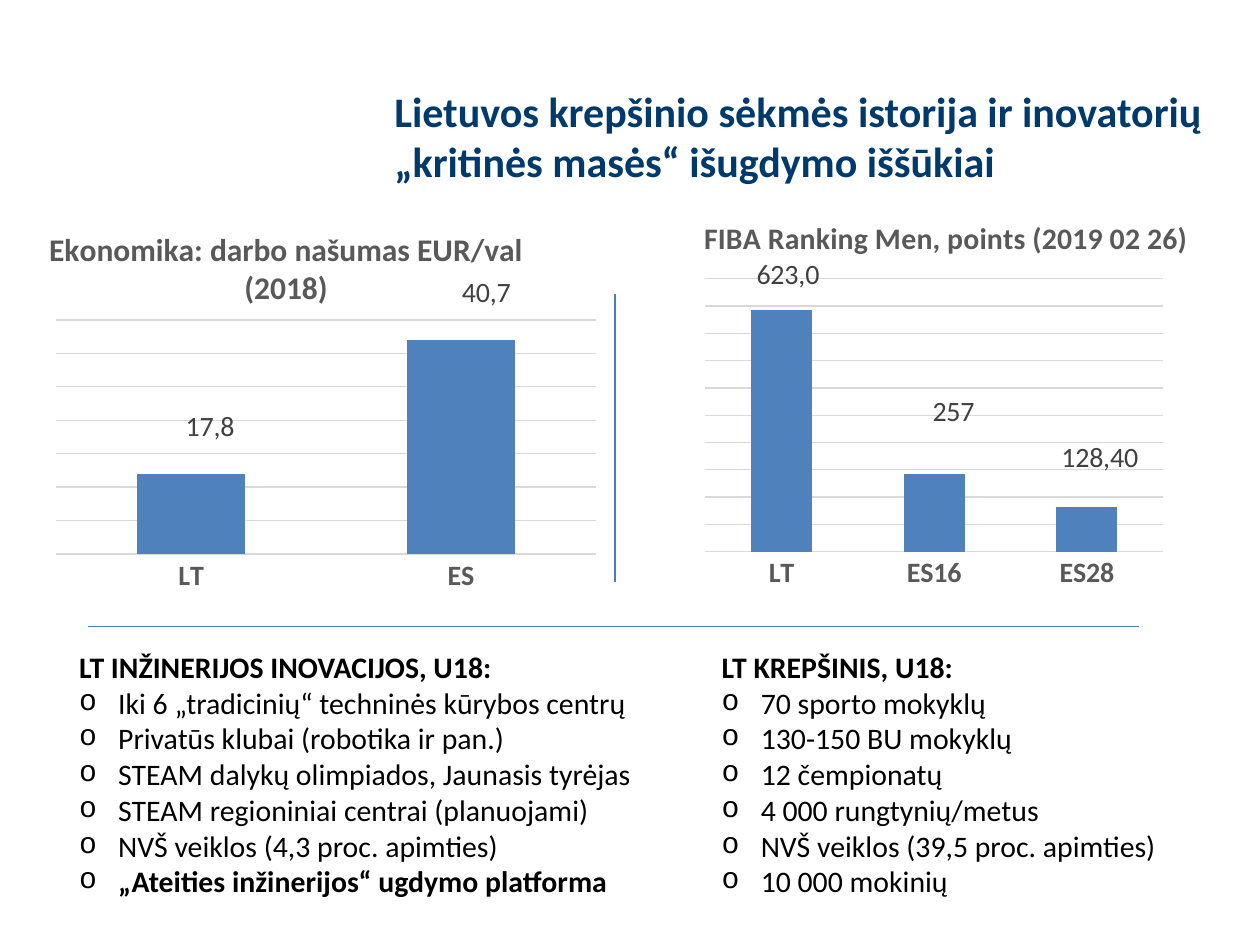
from lxml.etree import SubElement
from pptx import Presentation
from pptx.chart.data import CategoryChartData as ChartData
from pptx.dml.color import RGBColor
from pptx.enum.chart import XL_CHART_TYPE as ChartType
from pptx.enum.chart import XL_LABEL_POSITION as LabelPosition
from pptx.enum.chart import XL_TICK_LABEL_POSITION as TickLabels
from pptx.enum.chart import XL_TICK_MARK as TickMark
from pptx.enum.shapes import MSO_CONNECTOR as Connector
from pptx.enum.text import MSO_ANCHOR as Anchor
from pptx.enum.text import PP_ALIGN as Align
from pptx.oxml.ns import qn
from pptx.util import Inches, Pt

color = RGBColor.from_string
FONT = "Calibri"
BLUE, GREY, DARK = "4F81BD", "595959", "404040"
C15 = "http://schemas.microsoft.com/office/drawing/2012/chart"


def write(para, text, size=17, ink="000000", bold=False):
    span = para.add_run()
    span.text = text
    span.font.name, span.font.size, span.font.bold = FONT, Pt(size), bold
    span.font.color.rgb = color(ink)


def set_layout(parent, index, **values):
    """Place a chart part by shares of the chart's size."""
    for old in parent.findall(qn("c:layout")):
        parent.remove(old)
    layout = SubElement(parent, qn("c:layout"))
    manual = SubElement(layout, qn("c:manualLayout"))
    for tag, value in values.items():
        SubElement(manual, qn("c:" + tag)).set("val", str(value))
    parent.insert(index, layout)


deck = Presentation()
deck.slide_width, deck.slide_height = Inches(10), Inches(7.5)
page = deck.slides.add_slide(deck.slide_layouts[5])
shapes = page.shapes

# Title
title = shapes.title
title.left, title.top, title.width, title.height = map(Inches, (3.03, 0.57, 6.61, 1.01))
title.text_frame.vertical_anchor = Anchor.MIDDLE
title.text_frame.word_wrap = True
title.text_frame.margin_right = 0
heading = title.text_frame.paragraphs[0]
heading.alignment = Align.LEFT
write(heading, "Lietuvos krepšinio sėkmės istorija ir inovatorių „kritinės masės“ išugdymo iššūkiai",
      size=24, ink="003A6C", bold=True)

# Charts: place, title, title size and corner, plot area, axis top and step,
# then per column: category, value, label, label shift
charts = [
    ((-0.26, 1.66, 5.04, 3.26), "Ekonomika: darbo našumas EUR/val (2018)", 18, (0.12, 0.03),
     (0.14, 0.27, 0.85, 0.57), 35, 5,
     [("LT", 12, "17,8", (0.03, -0.06)), ("ES", 32, "40,7", (0.04, -0.06))]),
    ((4.88, 1.61, 5.12, 3.55), "FIBA Ranking Men, points (2019 02 26)", 17, (0.13, 0.02),
     (0.14, 0.17, 0.71, 0.61), 500, 50,
     [("LT", 442, "623,0", (0.01, -0.03)), ("ES16", 142, "257", (0.03, -0.09)),
      ("ES28", 81, "128,40", (0.02, -0.06))]),
]
for place, name, size, corner, plot_area, top, step, columns in charts:
    data = ChartData(number_format="0.00")
    data.categories = [column[0] for column in columns]
    data.add_series("Series 1", [column[1] for column in columns])
    chart = shapes.add_chart(ChartType.COLUMN_CLUSTERED, *map(Inches, place), data).chart
    chart.font.name, chart.font.size = FONT, Pt(10)
    chart.font.color.rgb = color("000000")
    chart.has_legend = False
    chart.has_title = True
    chart.chart_title.include_in_layout = False
    write(chart.chart_title.text_frame.paragraphs[0], name, size=size, ink=GREY, bold=True)

    # Axes
    values = chart.value_axis
    values.minimum_scale, values.maximum_scale, values.major_unit = 0, top, step
    values.major_gridlines.format.line.color.rgb = color("D9D9D9")
    values.major_gridlines.format.line.width = Pt(0.75)
    values.tick_label_position = TickLabels.NONE
    values.visible = False
    names = chart.category_axis
    names.major_tick_mark = TickMark.NONE
    names.format.line.fill.background()
    font = names.tick_labels.font
    font.name, font.size, font.bold = FONT, Pt(16), True
    font.color.rgb = color(GREY)

    # Columns and their labels
    plot = chart.plots[0]
    plot.gap_width = 150
    plot.vary_by_categories = False
    series = plot.series[0]
    series.format.fill.solid()
    series.format.fill.fore_color.rgb = color(BLUE)
    labels = series.data_labels
    labels.show_value = True
    labels.number_format, labels.number_format_is_linked = "0.00", False
    labels.font.name, labels.font.size = FONT, Pt(16)
    labels.font.color.rgb = color(DARK)
    for index, column in enumerate(columns):
        label = series.points[index].data_label
        write(label.text_frame.paragraphs[0], column[2], size=16, ink=DARK)
        label.position = LabelPosition.OUTSIDE_END

    # No leader lines from labels to columns
    space = chart._chartSpace
    for leader in space.xpath(".//c:showLeaderLines"):
        leader.set("val", "0")
    extensions = SubElement(space.xpath(".//c:ser/c:dLbls")[0], qn("c:extLst"))
    extension = SubElement(extensions, qn("c:ext"), nsmap={"c15": C15})
    extension.set("uri", "{CE6537A1-D6FC-4f65-9D91-7224C49458BB}")
    SubElement(extension, "{%s}showLeaderLines" % C15).set("val", "0")

    # Manual positions inside the chart
    x, y, w, h = plot_area
    set_layout(space.xpath(".//c:plotArea")[0], 0, layoutTarget="inner",
               xMode="edge", yMode="edge", x=x, y=y, w=w, h=h)
    set_layout(space.xpath("c:chart/c:title")[0], 1,
               xMode="edge", yMode="edge", x=corner[0], y=corner[1])
    for element, column in zip(space.xpath(".//c:dLbl"), columns):
        set_layout(element, 1, x=column[3][0], y=column[3][1])

# Lists
lists = [
    (5.63, 4.03, "LT KREPŠINIS, U18:",
     ["70 sporto mokyklų", "130-150 BU mokyklų", "12 čempionatų", "4 000 rungtynių/metus",
      "NVŠ veiklos (39,5 proc. apimties)", "10 000 mokinių"]),
    (0.53, 4.97, "LT INŽINERIJOS INOVACIJOS, U18:",
     ["Iki 6 „tradicinių“ techninės kūrybos centrų", "Privatūs klubai (robotika ir pan.)",
      "STEAM dalykų olimpiados, Jaunasis tyrėjas", "STEAM regioniniai centrai (planuojami)",
      "NVŠ veiklos (4,3 proc. apimties)", "„Ateities inžinerijos“ ugdymo platforma"]),
]
for left, width, header, items in lists:
    frame = shapes.add_textbox(Inches(left), Inches(5.1), Inches(width), Inches(2.1)).text_frame
    frame.word_wrap = True
    write(frame.paragraphs[0], header, bold=True)
    for item in items:
        para = frame.add_paragraph()
        properties = para._p.get_or_add_pPr()
        properties.set("marL", str(Inches(0.31)))
        properties.set("indent", str(-Inches(0.31)))
        SubElement(properties, qn("a:buFont")).set("typeface", "Courier New")
        SubElement(properties, qn("a:buChar")).set("char", "o")
        write(para, item, bold=item.startswith("„"))

# Dividing lines
for ends in [(4.88, 2.33, 4.88, 4.62), (0.7, 4.97, 9.04, 4.97)]:
    divider = shapes.add_connector(Connector.STRAIGHT, *map(Inches, ends))
    divider.line.color.rgb = color("4B7EBC")
    divider.line.width = Pt(0.75)
    SubElement(divider._element.spPr, qn("a:effectLst"))

deck.save("out.pptx")
